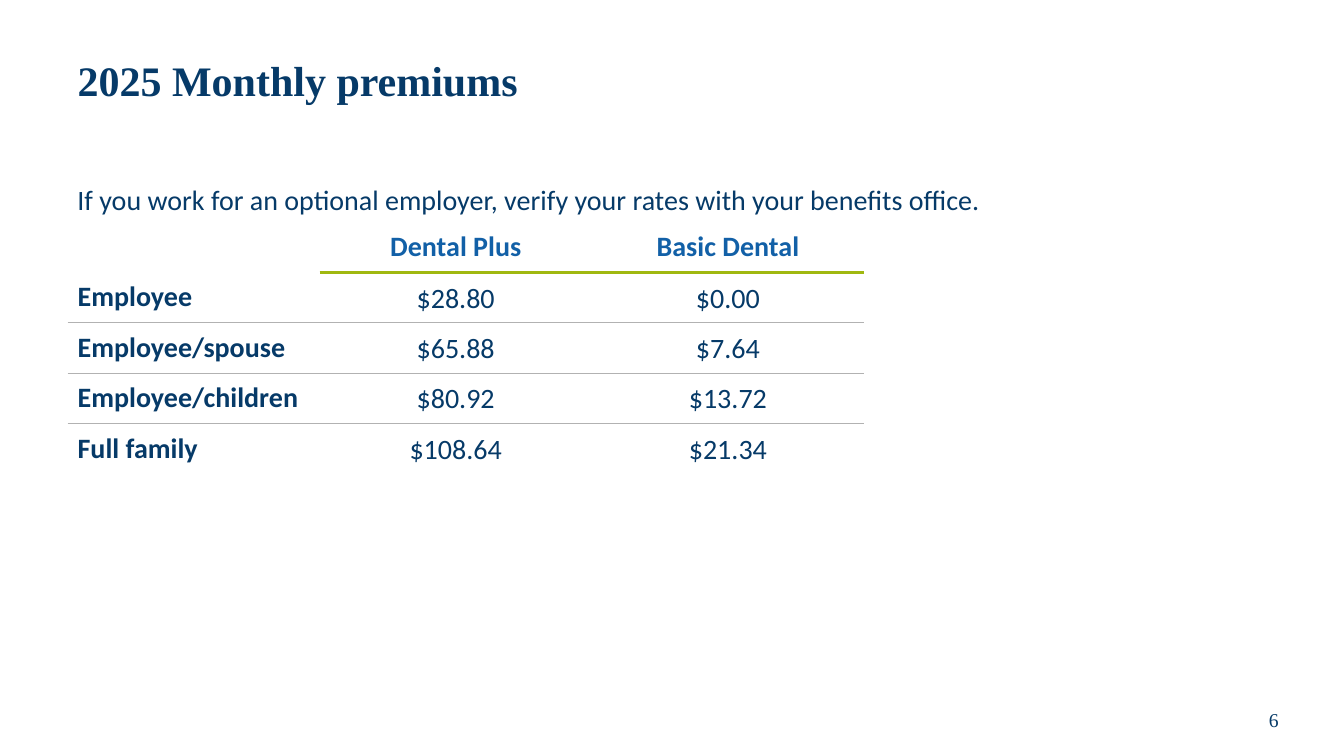
"""Build the 2025 monthly dental premiums slide."""
from dataclasses import dataclass

from lxml.etree import SubElement
from pptx import Presentation
from pptx.dml.color import RGBColor
from pptx.enum.text import MSO_ANCHOR, MSO_AUTO_SIZE, PP_ALIGN
from pptx.oxml.ns import qn
from pptx.util import Inches, Pt

TITLE = "2025 Monthly premiums"
NOTE = "If you work for an optional employer, verify your rates with your benefits office."
PAGE = "6"
RATES = [
    ("", "Dental Plus", "Basic Dental"),
    ("Employee", "$28.80", "$0.00"),
    ("Employee/spouse", "$65.88", "$7.64"),
    ("Employee/children", "$80.92", "$13.72"),
    ("Full family", "$108.64", "$21.34"),
]
WIDTHS = (2.5, 2.7, 2.7)
ROW = 0.5
LEFT, WIDE = 0.67, 12


@dataclass(frozen=True)
class Theme:
    """Colours, fonts and type sizes."""
    navy: str = "063A68"
    blue: str = "1260A7"
    green: str = "A0B810"
    grey: str = "B2B2B2"
    serif: str = "Times New Roman"
    sans: str = "Calibri"
    head: int = 30
    body: int = 20
    foot: int = 14
    thick: float = 2.25
    thin: float = 0.5


LOOK = Theme()


def write(frame, text, size, font, color=LOOK.navy, bold=False, align=PP_ALIGN.LEFT, space=None):
    """Put one styled run in the first paragraph of a frame."""
    para = frame.paragraphs[0]
    para.alignment = align
    if space:
        para.line_spacing = space
    run = para.add_run()
    run.text = text
    run.font.size = Pt(size)
    run.font.name = font
    run.font.bold = bold
    run.font.color.rgb = RGBColor.from_string(color)


def add_box(slide, left, top, width, height):
    """Add a wrapping text box and return its frame."""
    frame = slide.shapes.add_textbox(*map(Inches, (left, top, width, height))).text_frame
    frame.word_wrap = True
    return frame


def rule_below(row, col):
    """Return the colour and weight of the line under a cell, if any."""
    if row == 0:
        return (LOOK.green, LOOK.thick) if col else None
    return (LOOK.grey, LOOK.thin) if 0 < row < len(RATES) - 1 else None


def set_edges(cell, above, below):
    """Draw the top and bottom edges of a cell and clear its sides."""
    props = cell._tc.get_or_add_tcPr()
    for tag, edge in (("lnL", None), ("lnR", None), ("lnT", above), ("lnB", below)):
        line = SubElement(props, qn(f"a:{tag}"))
        if edge:
            color, weight = edge
            line.set("w", str(Pt(weight)))
            fill = SubElement(line, qn("a:solidFill"))
            SubElement(fill, qn("a:srgbClr")).set("val", color)
        else:
            SubElement(line, qn("a:noFill"))


def add_rates(slide):
    """Add the premium table."""
    size = (LEFT, 2.2, sum(WIDTHS), ROW * len(RATES))
    table = slide.shapes.add_table(len(RATES), len(WIDTHS), *map(Inches, size)).table
    table.horz_banding = False
    table.first_row = False
    for col, width in enumerate(WIDTHS):
        table.columns[col].width = Inches(width)
    for row, texts in enumerate(RATES):
        table.rows[row].height = Inches(ROW)
        for col, text in enumerate(texts):
            cell = table.cell(row, col)
            cell.vertical_anchor = MSO_ANCHOR.MIDDLE
            set_edges(cell, rule_below(row - 1, col), rule_below(row, col))
            cell.fill.background()
            if text:
                price = row > 0 and col > 0
                write(cell.text_frame, text, LOOK.body, LOOK.sans,
                      color=LOOK.navy if row else LOOK.blue,
                      bold=not price,
                      align=PP_ALIGN.CENTER if col else PP_ALIGN.LEFT,
                      space=1.07 if price else None)


def main():
    """Build and save the slide."""
    deck = Presentation()
    deck.slide_width, deck.slide_height = Inches(13.33), Inches(7.5)
    slide = deck.slides.add_slide(deck.slide_layouts[5])

    title = slide.shapes.title
    title.left, title.top, title.width, title.height = map(Inches, (LEFT, 0.25, WIDE, 1.15))
    title.text_frame.vertical_anchor = MSO_ANCHOR.MIDDLE
    write(title.text_frame, TITLE, LOOK.head, LOOK.serif, bold=True, space=0.9)

    note = add_box(slide, LEFT, 1.76, WIDE, 0.44)
    note.auto_size = MSO_AUTO_SIZE.SHAPE_TO_FIT_TEXT
    write(note, NOTE, LOOK.body, LOOK.sans)

    add_rates(slide)

    page = add_box(slide, 12.05, 6.89, 1.17, 0.5)
    page.vertical_anchor = MSO_ANCHOR.MIDDLE
    write(page, PAGE, LOOK.foot, LOOK.serif, align=PP_ALIGN.CENTER)

    deck.save("out.pptx")


if __name__ == "__main__":
    main()
